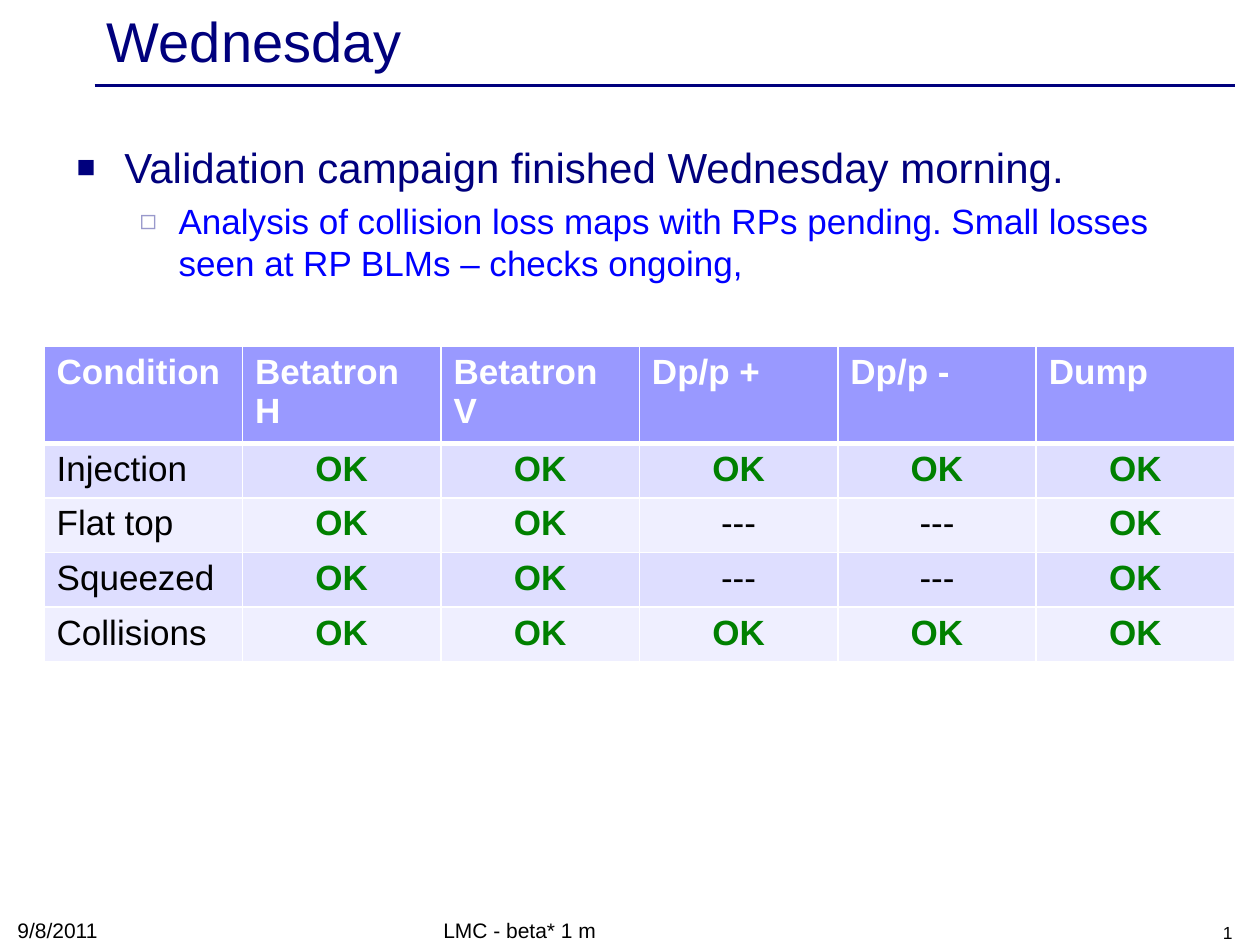
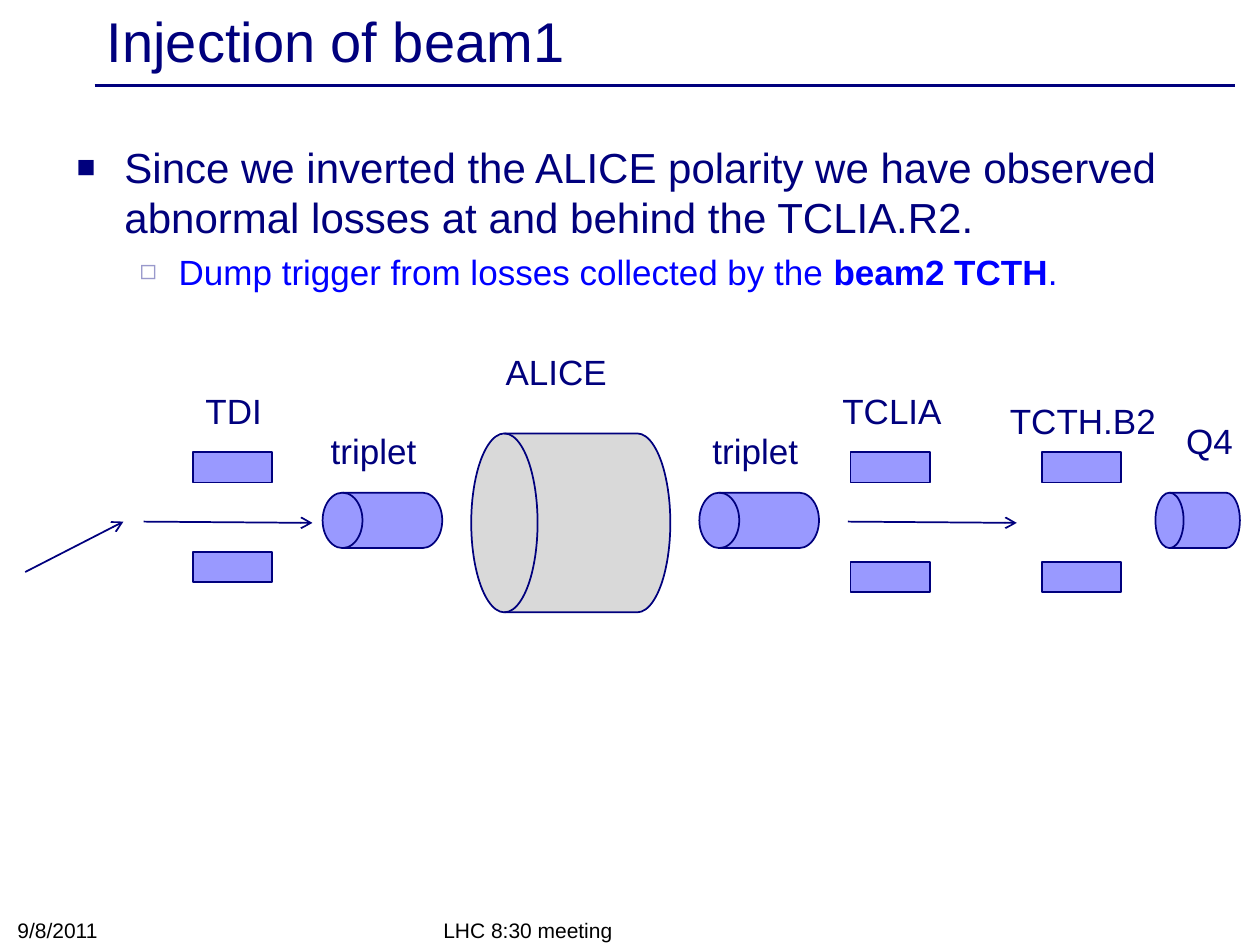
from lxml import etree
from pptx import Presentation
from pptx.dml.color import RGBColor
from pptx.enum.shapes import MSO_CONNECTOR, MSO_SHAPE
from pptx.enum.text import MSO_ANCHOR, PP_ALIGN
from pptx.oxml.ns import qn
from pptx.util import Inches, Pt

LEFT, CENTER, RIGHT = PP_ALIGN.LEFT, PP_ALIGN.CENTER, PP_ALIGN.RIGHT
TOP, MIDDLE, BOTTOM = MSO_ANCHOR.TOP, MSO_ANCHOR.MIDDLE, MSO_ANCHOR.BOTTOM
RECTANGLE = MSO_SHAPE.RECTANGLE
DISK = MSO_SHAPE.FLOWCHART_MAGNETIC_DISK
DRUM = MSO_SHAPE.FLOWCHART_DIRECT_ACCESS_STORAGE
STRAIGHT = MSO_CONNECTOR.STRAIGHT

COLORS = {
    "navy": "00007D", "blue": "0000FF", "periwinkle": "9999FF",
    "bullet": "9999CC", "green": "008000", "black": "000000",
    "white": "FFFFFF", "grey": "D9D9D9", "band": "DEDEFF", "pale": "EFEFFF",
}
FORMATS = {
    "title": {"size": 32, "color": "navy"},
    "point": {"size": 24, "color": "navy"},
    "detail": {"size": 20, "color": "blue"},
    "strong": {"size": 20, "color": "blue", "bold": True},
    "label": {"size": 20, "color": "navy"},
    "footer": {"size": 12, "color": "black"},
    "number": {"size": 10, "color": "black"},
    "header": {"size": 20, "color": "white", "bold": True},
    "cell": {"size": 20, "color": "black"},
    "ok": {"size": 20, "color": "green", "bold": True},
}
BULLETS = {
    "point": {"char": "■", "color": "navy", "percent": 75,
              "indent": 0.38, "hanging": 0.38, "before": 0},
    "detail": {"char": "◻", "color": "bullet", "percent": 80,
               "indent": 0.81, "hanging": 0.31, "before": 4.8},
}


class Deck:
    """Holds the shared style and the current page."""

    def __init__(self):
        self.presentation = Presentation()
        self.presentation.slide_width = Inches(10)
        self.presentation.slide_height = Inches(7.5)
        self.page = None

    def color(self, name):
        return RGBColor.from_string(COLORS[name])

    def add_page(self, title, footer, number=None):
        self.page = self.presentation.slides.add_slide(self.presentation.slide_layouts[6])
        self.line((0.75, 0.68), (9.8, 0.68), width=2)
        self.text((0.75, 0.03, 9, 0.57), title, "title", anchor=MIDDLE)
        if number:
            self.text((7.55, 7.25, 2.33, 0.28), number, "number", RIGHT, BOTTOM)
        self.text((3.42, 7.25, 3.17, 0.28), footer, "footer", anchor=BOTTOM)
        self.text((0.04, 7.24, 2.33, 0.29), "9/8/2011", "footer", anchor=BOTTOM)

    def span(self, paragraph, words, style):
        span = paragraph.add_run()
        span.text = words
        values = {"name": "Arial", "bold": False, **FORMATS[style]}
        span.font.color.rgb = self.color(values.pop("color"))
        values["size"] = Pt(values["size"])
        for key, value in values.items():
            setattr(span.font, key, value)

    def frame(self, place, anchor=TOP, wrap=True):
        box = self.page.shapes.add_textbox(*map(Inches, place))
        box.text_frame.word_wrap = wrap
        box.text_frame.vertical_anchor = anchor
        return box.text_frame

    def text(self, place, words, style, align=LEFT, anchor=TOP, wrap=True):
        paragraph = self.frame(place, anchor, wrap).paragraphs[0]
        paragraph.alignment = align
        self.span(paragraph, words, style)

    def label(self, left, top, width, words):
        self.text((left, top, width, 0.44), words, "label", CENTER, wrap=False)

    def bullet(self, paragraph, style):
        bullet = BULLETS[style]
        properties = paragraph._p.get_or_add_pPr()
        properties.set("marL", str(Inches(bullet["indent"])))
        properties.set("indent", str(-Inches(bullet["hanging"])))
        color = etree.SubElement(properties, qn("a:buClr"))
        etree.SubElement(color, qn("a:srgbClr"), val=COLORS[bullet["color"]])
        etree.SubElement(properties, qn("a:buSzPct"), val=str(bullet["percent"] * 1000))
        etree.SubElement(properties, qn("a:buFont"), typeface="Arial")
        etree.SubElement(properties, qn("a:buChar"), char=bullet["char"])
        paragraph.space_before = Pt(bullet["before"])

    def body(self, width, point, details):
        frame = self.frame((0.51, 1.07, width, 1.42))
        self.bullet(frame.paragraphs[0], "point")
        self.span(frame.paragraphs[0], point, "point")
        paragraph = frame.add_paragraph()
        paragraph.level = 1
        self.bullet(paragraph, "detail")
        for words, style in details:
            self.span(paragraph, words, style)

    def line(self, start, end, width=1, arrow=False):
        line = self.page.shapes.add_connector(STRAIGHT, *map(Inches, start + end))
        line.line.color.rgb = self.color("navy")
        line.line.width = Pt(width)
        if arrow:
            etree.SubElement(line.line._get_or_add_ln(), qn("a:tailEnd"), type="arrow")
        etree.SubElement(line._element.spPr, qn("a:effectLst"))

    def shape(self, kind, place, fill="periwinkle", rotation=0):
        shape = self.page.shapes.add_shape(kind, *map(Inches, place))
        shape.shadow.inherit = False
        shape.rotation = rotation
        shape.fill.solid()
        shape.fill.fore_color.rgb = self.color(fill)
        shape.line.color.rgb = self.color("navy")
        shape.line.width = Pt(1)

    def drum(self, left, width):
        self.shape(DRUM, (left, 3.91, width, 0.44), rotation=180)

    def jaws(self, left, lower):
        for top in (3.59, lower):
            self.shape(RECTANGLE, (left, top, 0.63, 0.24))

    def borders(self, cell, top, bottom):
        properties = cell._tc.get_or_add_tcPr()
        for side, width in {"lnL": 1, "lnR": 1, "lnT": top, "lnB": bottom}.items():
            border = etree.SubElement(properties, qn(f"a:{side}"), w=str(Pt(width)))
            fill = etree.SubElement(border, qn("a:solidFill"))
            etree.SubElement(fill, qn("a:srgbClr"), val=COLORS["white"])

    def table(self, place, rows):
        table = self.page.shapes.add_table(len(rows), len(rows[0]), *map(Inches, place)).table
        for row, values in enumerate(rows):
            table.rows[row].height = Inches(place[3] / len(rows))
            fill = "periwinkle" if row == 0 else "band" if row % 2 else "pale"
            for column, words in enumerate(values):
                cell = table.cell(row, column)
                self.borders(cell, 3 if row == 1 else 1, 3 if row == 0 else 1)
                cell.fill.solid()
                cell.fill.fore_color.rgb = self.color(fill)
                style = "header" if row == 0 else "ok" if words == "OK" else "cell"
                paragraph = cell.text_frame.paragraphs[0]
                paragraph.alignment = CENTER if row and column else LEFT
                self.span(paragraph, words, style)


def validation_page(deck):
    """Show the state of the validation campaign."""
    deck.add_page("Wednesday", "LMC - beta* 1 m", "1")
    deck.body(9.14, "Validation campaign finished Wednesday morning.", [
        ("Analysis of collision loss maps with RPs pending. "
         "Small losses seen at RP BLMs – checks ongoing,", "detail")])
    complete = ["OK"] * 5
    partial = ["OK", "OK", "---", "---", "OK"]
    deck.table((0.35, 2.75, 9.45, 2.03), [
        ["Condition", "Betatron H", "Betatron V", "Dp/p +", "Dp/p -", "Dump"],
        ["Injection", *complete],
        ["Flat top", *partial],
        ["Squeezed", *partial],
        ["Collisions", *complete],
    ])


def injection_page(deck):
    """Show the layout of the injection region."""
    deck.add_page("Injection of beam1", "LHC 8:30 meeting")
    deck.body(9, "Since we inverted the ALICE polarity we have observed "
              "abnormal losses at and behind the TCLIA.R2.", [
                  ("Dump trigger from losses collected by the ", "detail"),
                  ("beam2 TCTH", "strong"), (".", "detail")])
    for left, lower in ((1.53, 4.38), (6.75, 4.46), (8.27, 4.46)):
        deck.jaws(left, lower)
    deck.shape(DISK, (3.82, 3.36, 1.42, 1.58), "grey", 270)
    for left, width in ((2.56, 0.95), (5.55, 0.95), (9.17, 0.67)):
        deck.drum(left, width)
    for start, end in (((0.2, 4.54), (0.98, 4.14)),
                       ((1.14, 4.14), (2.48, 4.15)),
                       ((6.73, 4.14), (8.07, 4.15))):
        deck.line(start, end, arrow=True)
    for label in ((1.53, 3.04, 0.65, "TDI"), (2.52, 3.36, 0.89, "triplet"),
                  (3.91, 2.73, 1.01, "ALICE"), (5.55, 3.36, 0.89, "triplet"),
                  (6.58, 3.04, 1, "TCLIA"), (7.91, 3.12, 1.37, "TCTH.B2"),
                  (9.31, 3.28, 0.58, "Q4")):
        deck.label(*label)


def main():
    """Build both pages and save the deck."""
    deck = Deck()
    validation_page(deck)
    injection_page(deck)
    deck.presentation.save("out.pptx")


if __name__ == "__main__":
    main()
